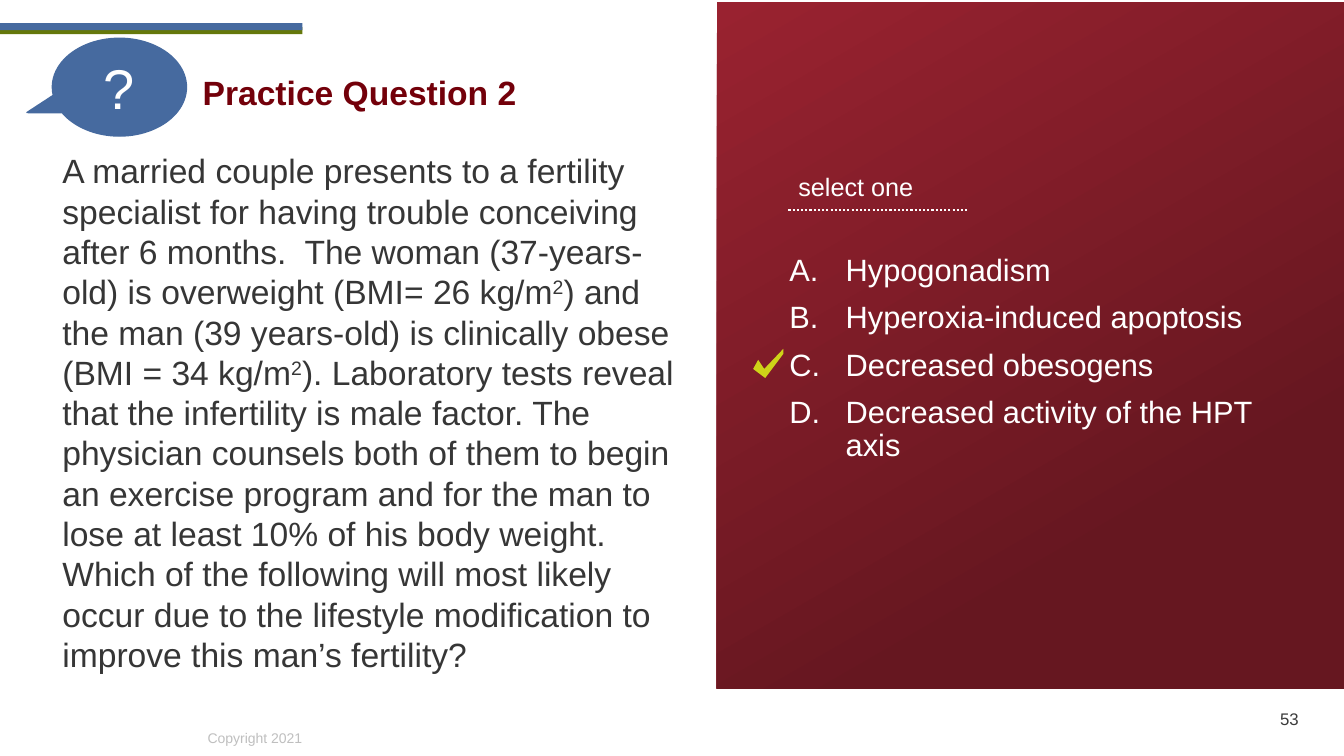
from lxml import etree
from pptx import Presentation
from pptx.dml.color import RGBColor
from pptx.enum.dml import MSO_LINE
from pptx.enum.shapes import MSO_CONNECTOR, MSO_SHAPE
from pptx.enum.text import MSO_ANCHOR, PP_ALIGN
from pptx.oxml.ns import qn
from pptx.util import Inches, Pt

RECTANGLE, CALLOUT = MSO_SHAPE.RECTANGLE, MSO_SHAPE.OVAL_CALLOUT
STRAIGHT, DOTTED = MSO_CONNECTOR.STRAIGHT, MSO_LINE.ROUND_DOT
TOP, MIDDLE = MSO_ANCHOR.TOP, MSO_ANCHOR.MIDDLE
LEFT, CENTER, RIGHT = PP_ALIGN.LEFT, PP_ALIGN.CENTER, PP_ALIGN.RIGHT

WHITE = RGBColor(0xFF, 0xFF, 0xFF)
BLUE = RGBColor(0x46, 0x6A, 0x9F)
OLIVE = RGBColor(0x65, 0x78, 0x0B)
MAROON = RGBColor(0x73, 0x00, 0x0A)
BRIGHT_RED = RGBColor(0x99, 0x22, 0x30)
DARK_RED = RGBColor(0x66, 0x17, 0x20)
LIME = RGBColor(0xCE, 0xD3, 0x18)
CHARCOAL = RGBColor(0x36, 0x36, 0x36)
NUMBER_GRAY = RGBColor(0x3B, 0x3B, 0x3B)
PALE_GRAY = RGBColor(0xBF, 0xBF, 0xBF)

# Question text; every second piece is a superscript
QUESTION = [
    "A married couple presents to a fertility specialist for having trouble conceiving "
    "after 6 months.  The woman (37-years-old) is overweight (BMI= 26 kg/m",
    "2",
    ") and the man (39 years-old) is clinically obese (BMI = 34 kg/m",
    "2",
    "). Laboratory tests reveal that the infertility is male factor. The physician "
    "counsels both of them to begin an exercise program and for the man to lose at least "
    "10% of his body weight. Which of the following will most likely occur due to the "
    "lifestyle modification to improve this man’s fertility?",
]
ANSWERS = ["Hypogonadism", "Hyperoxia-induced apoptosis", "Decreased obesogens",
           "Decreased activity of the HPT axis"]


def format_runs(paragraph, size, color, bold=False):
    for run in paragraph.runs:
        run.font.name = "Arial"
        run.font.size = Pt(size)
        run.font.bold = bold
        run.font.color.rgb = color


def write(shape, text, size, color, align=LEFT, anchor=TOP, bold=False, wrap=True):
    frame = shape.text_frame
    frame.text = text
    frame.word_wrap = wrap
    frame.vertical_anchor = anchor
    for paragraph in frame.paragraphs:
        paragraph.alignment = align
        format_runs(paragraph, size, color, bold)
    return frame


def add_text(slide, left, top, width, height, *content, **options):
    box = slide.shapes.add_textbox(Inches(left), Inches(top), Inches(width), Inches(height))
    return write(box, *content, **options)


def add_block(slide, kind, left, top, width, height, color):
    shape = slide.shapes.add_shape(
        kind, Inches(left), Inches(top), Inches(width), Inches(height))
    shape.shadow.inherit = False
    shape.fill.solid()
    shape.fill.fore_color.rgb = color
    shape.line.fill.background()
    return shape


def add_header(slide, left, top):
    # Accent bars, the blue one overlapping the olive one
    for offset, color in ((0.04, OLIVE), (0, BLUE)):
        add_block(slide, RECTANGLE, left, top + offset, 3, 0.07, color)

    # Question mark callout
    callout = add_block(slide, CALLOUT, left + 0.52, top + 0.15, 1.33, 0.97, BLUE)
    callout.adjustments[0] = -0.69
    callout.adjustments[1] = 0.26
    callout.line.color.rgb = BLUE
    callout.line.width = Pt(1)
    write(callout, "?", 40, WHITE, align=CENTER, anchor=MIDDLE)

    # Title
    title = slide.shapes.title
    title.left, title.top = Inches(left + 1.91), Inches(top + 0.43)
    title.width, title.height = Inches(5.07), Inches(0.5)
    write(title, "Practice Question 2", 24, MAROON, bold=True)


def add_question(slide, left, top, width, height):
    block = add_block(slide, RECTANGLE, left, top, width, height, WHITE)
    frame = write(block, "", 24, CHARCOAL)
    paragraph = frame.paragraphs[0]
    for index, piece in enumerate(QUESTION):
        run = paragraph.add_run()
        run.text = piece
        if index % 2:
            run.font._element.set("baseline", "30000")
    format_runs(paragraph, 24, CHARCOAL)


def add_check_mark(slide, left, top):
    points = [(0.05, 0.11), (0, 0.2), (0.12, 0.29), (0.3, 0.05), (0.3, 0), (0.11, 0.2)]
    corners = [(Inches(left + x), Inches(top + y)) for x, y in points]
    builder = slide.shapes.build_freeform(*corners[0])
    builder.add_line_segments(corners[1:], close=True)
    check = builder.convert_to_shape()
    check.shadow.inherit = False
    check.fill.solid()
    check.fill.fore_color.rgb = LIME
    check.line.fill.background()


def add_answer_panel(slide, left, top, width, height):
    # Gradient background
    panel = add_block(slide, RECTANGLE, left, top, width, height, DARK_RED)
    panel.fill.gradient()
    panel.fill.gradient_angle = 300
    stops = panel.fill.gradient_stops
    for stop, position, color in zip(stops, (0, 0.74), (BRIGHT_RED, DARK_RED)):
        stop.position = position
        stop.color.rgb = color

    # Instruction with dotted rule
    frame = add_text(slide, left + 0.71, top + 1.66, 1.39, 0.4, "select one", 18, WHITE)
    frame.paragraphs[0].line_spacing = 0.9
    rule_y = Inches(top + 2.06)
    rule = slide.shapes.add_connector(
        STRAIGHT, Inches(left + 0.71), rule_y, Inches(left + 2.48), rule_y)
    rule.line.color.rgb = WHITE
    rule.line.width = Pt(1.5)
    rule.line.dash_style = DOTTED
    etree.SubElement(rule._element.spPr, qn("a:effectLst"))

    # Lettered answers
    frame = add_text(slide, left + 0.62, top + 2.46, 5.08, 2.54,
                     "\n".join(ANSWERS), 22, WHITE)
    for index, paragraph in enumerate(frame.paragraphs):
        paragraph.line_spacing = 0.9
        if index:
            paragraph.space_before = Pt(10)
        properties = paragraph._p.get_or_add_pPr()
        properties.set("marL", str(Inches(0.56)))
        properties.set("indent", str(-Inches(0.56)))
        etree.SubElement(properties, qn("a:buFont"), typeface="Arial")
        etree.SubElement(properties, qn("a:buAutoNum"), type="alphaUcPeriod")

    # Mark beside the correct answer
    add_check_mark(slide, left + 0.36, top + 3.44)


def add_footer(slide, left, top):
    add_text(slide, left + 1.96, top + 0.26, 1.15, 0.27, "Copyright 2021", 10, PALE_GRAY,
             wrap=False)
    add_text(slide, left + 12.09, top, 0.89, 0.4, "53", 12, NUMBER_GRAY,
             align=RIGHT, anchor=MIDDLE)


def main():
    presentation = Presentation()
    presentation.slide_width, presentation.slide_height = Inches(13.33), Inches(7.5)
    slide = presentation.slides.add_slide(presentation.slide_layouts[5])
    add_answer_panel(slide, 7.11, 0.02, 6.22, 6.81)
    add_question(slide, 0.52, 1.44, 6.48, 5.31)
    add_header(slide, 0, 0.23)
    add_footer(slide, 0, 6.93)
    presentation.save("out.pptx")


if __name__ == "__main__":
    main()
